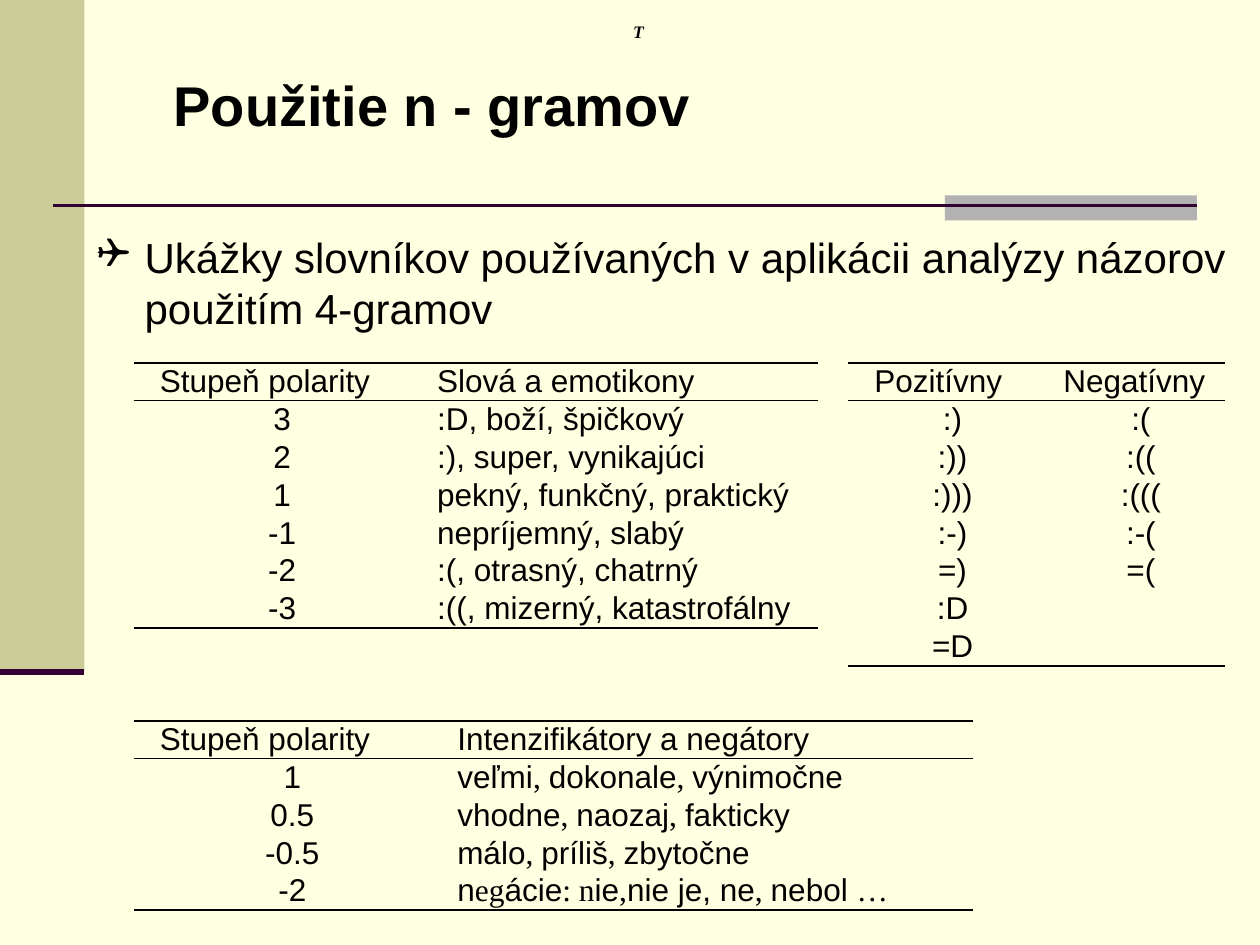
from lxml import etree
from pptx import Presentation
from pptx.dml.color import RGBColor
from pptx.enum.shapes import MSO_CONNECTOR as CONN, MSO_SHAPE as SHAPE
from pptx.enum.text import MSO_ANCHOR as ANCHOR, MSO_AUTO_SIZE as AUTO, PP_ALIGN as ALIGN
from pptx.oxml.ns import qn
from pptx.util import Inches, Pt

CREAM = RGBColor(0xFF, 0xFF, 0xE1)
KHAKI = RGBColor(0xCC, 0xCC, 0x99)
GRAY = RGBColor(0xB2, 0xB2, 0xB2)
PLUM = RGBColor(0x33, 0x00, 0x33)
BLACK = RGBColor(0, 0, 0)
SANS, SERIF = "Arial", "Times New Roman"
ROW_H = 0.3

POLARITY = [
    ("Stupeň polarity", "Slová a emotikony"),
    ("3", ":D, boží, špičkový"),
    ("2", ":), super, vynikajúci"),
    ("1", "pekný, funkčný, praktický"),
    ("-1", "nepríjemný, slabý"),
    ("-2", ":(, otrasný, chatrný"),
    ("-3", ":((, mizerný, katastrofálny"),
]
EMOTICONS = [
    ("Pozitívny", "Negatívny"),
    (":)", ":("), (":))", ":(("), (":)))", ":((("), (":-)", ":-("),
    ("=)", "=("), (":D", ""), ("=D", ""),
]
# A bar switches between the sans and the serif font.
INTENSIFIERS = [
    ("Stupeň polarity", "Intenzifikátory a negátory"),
    ("1", "veľmi|, |dokonale|, |výnimočne"),
    ("0.5", "vhodne|, |naozaj|, |fakticky"),
    ("-0.5", "málo|, |príliš|, |zbytočne"),
    ("-2", "n|eg|ácie|: n|ie|,|nie je, ne|, |nebol |…"),
]


def add_run(p, text, size, font=SANS, bold=False, italic=False):
    r = p.add_run()
    r.text = text
    f = r.font
    f.name, f.size, f.bold, f.italic = font, Pt(size), bold, italic
    f.color.rgb = BLACK


def set_indent(p, left, first):
    pPr = p._p.get_or_add_pPr()
    pPr.set("marL", str(Inches(left)))
    pPr.set("indent", str(Inches(first)))
    return pPr


def add_text_box(s, x, y, w, h, wrap=False):
    tf = s.shapes.add_textbox(Inches(x), Inches(y), Inches(w), Inches(h)).text_frame
    tf.word_wrap = wrap
    tf.auto_size = AUTO.SHAPE_TO_FIT_TEXT
    return tf


def add_block(s, x, y, w, h, color):
    sp = s.shapes.add_shape(SHAPE.RECTANGLE, Inches(x), Inches(y), Inches(w), Inches(h))
    sp.shadow.inherit = False
    sp.fill.solid()
    sp.fill.fore_color.rgb = color
    sp.line.fill.background()


def add_rule(s, x, y, w, weight):
    line = s.shapes.add_connector(CONN.STRAIGHT, Inches(x), Inches(y), Inches(x + w), Inches(y))
    line.line.color.rgb = PLUM
    line.line.width = Pt(weight)
    etree.SubElement(line._element.spPr, qn("a:effectLst"))


def add_frame(s):
    add_block(s, 0, 0, 0.67, 5.33, KHAKI)
    add_block(s, 7.5, 1.55, 2, 0.2, GRAY)
    add_rule(s, 0.42, 1.63, 9.08, 1.5)
    add_rule(s, 0, 5.33, 0.67, 3.5)


def add_mark(s, x, y, w, h):
    tf = add_text_box(s, x, y, w, h)
    tf.vertical_anchor = ANCHOR.MIDDLE
    p = tf.paragraphs[0]
    p.alignment = ALIGN.CENTER
    set_indent(p, 0, 0.16)
    add_run(p, "T", 10, SERIF, bold=True, italic=True)
    add_run(p, " ", 6, italic=True)


def add_title(s, x, y, w, h):
    p = add_text_box(s, x, y, w, h).paragraphs[0]
    add_run(p, "Použitie n - gramov", 32, bold=True)


def add_bullet(s, x, y, w, h):
    p = add_text_box(s, x, y, w, h, wrap=True).paragraphs[0]
    pPr = set_indent(p, 0.38, -0.38)
    etree.SubElement(pPr, qn("a:buFont"), typeface="Wingdings")
    etree.SubElement(pPr, qn("a:buChar"), char="❑")
    add_run(p, "Ukážky slovníkov používaných v aplikácii analýzy názorov použitím 4-gramov", 24)


def set_borders(cell, top, bottom):
    """Draw the horizontal borders of the given widths; None leaves a side open."""
    tcPr = cell._tc.get_or_add_tcPr()
    for side, width in (("L", None), ("R", None), ("T", top), ("B", bottom)):
        ln = etree.SubElement(tcPr, qn("a:ln" + side), w=str(Pt(width or 0)))
        if width:
            fill = etree.SubElement(ln, qn("a:solidFill"))
            etree.SubElement(fill, qn("a:srgbClr"), val=str(BLACK))
        else:
            etree.SubElement(ln, qn("a:noFill"))


def fill_cell(cell, text, centered):
    cell.margin_left = cell.margin_right = Inches(0.05)
    cell.margin_top = cell.margin_bottom = 0
    cell.vertical_anchor = ANCHOR.MIDDLE
    p = cell.text_frame.paragraphs[0]
    p.alignment = ALIGN.CENTER if centered else ALIGN.LEFT
    set_indent(p, 0, 0.16)
    if text:
        for i, part in enumerate(text.split("|")):
            add_run(p, part, 18, SERIF if i % 2 else SANS)


def add_lexicon(s, x, y, widths, rows, centered_cols):
    """Add a table ruled above and below its header and under its last row."""
    table = s.shapes.add_table(len(rows), len(widths), Inches(x), Inches(y),
                               Inches(sum(widths)), Inches(ROW_H * len(rows))).table
    table.first_row = table.horz_banding = False
    for col, width in zip(table.columns, widths):
        col.width = Inches(width)
    last = len(rows) - 1
    tops, bottoms = {0: 1.5, 1: 1}, {0: 1, last: 1.5}
    for i, row in enumerate(rows):
        table.rows[i].height = Inches(ROW_H)
        for j, text in enumerate(row):
            cell = table.cell(i, j)
            fill_cell(cell, text, i > 0 and j in centered_cols)
            set_borders(cell, tops.get(i), bottoms.get(i))
            cell.fill.background()


def main():
    prs = Presentation()
    prs.slide_width, prs.slide_height = Inches(10), Inches(7.5)
    s = prs.slides.add_slide(prs.slide_layouts[6])
    s.background.fill.solid()
    s.background.fill.fore_color.rgb = CREAM

    add_frame(s)
    add_title(s, 1.28, 0.51, 4.42, 0.63)
    add_bullet(s, 0.67, 1.79, 9.33, 0.91)
    add_lexicon(s, 6.73, 2.88, (1.5, 1.49), EMOTICONS, (0, 1))
    add_lexicon(s, 1.06, 2.88, (2.2, 3.23), POLARITY, (0,))
    add_mark(s, 0, 0, 10, 0.5)
    add_lexicon(s, 1.06, 5.72, (2.36, 4.3), INTENSIFIERS, (0,))
    prs.save("out.pptx")


if __name__ == "__main__":
    main()
